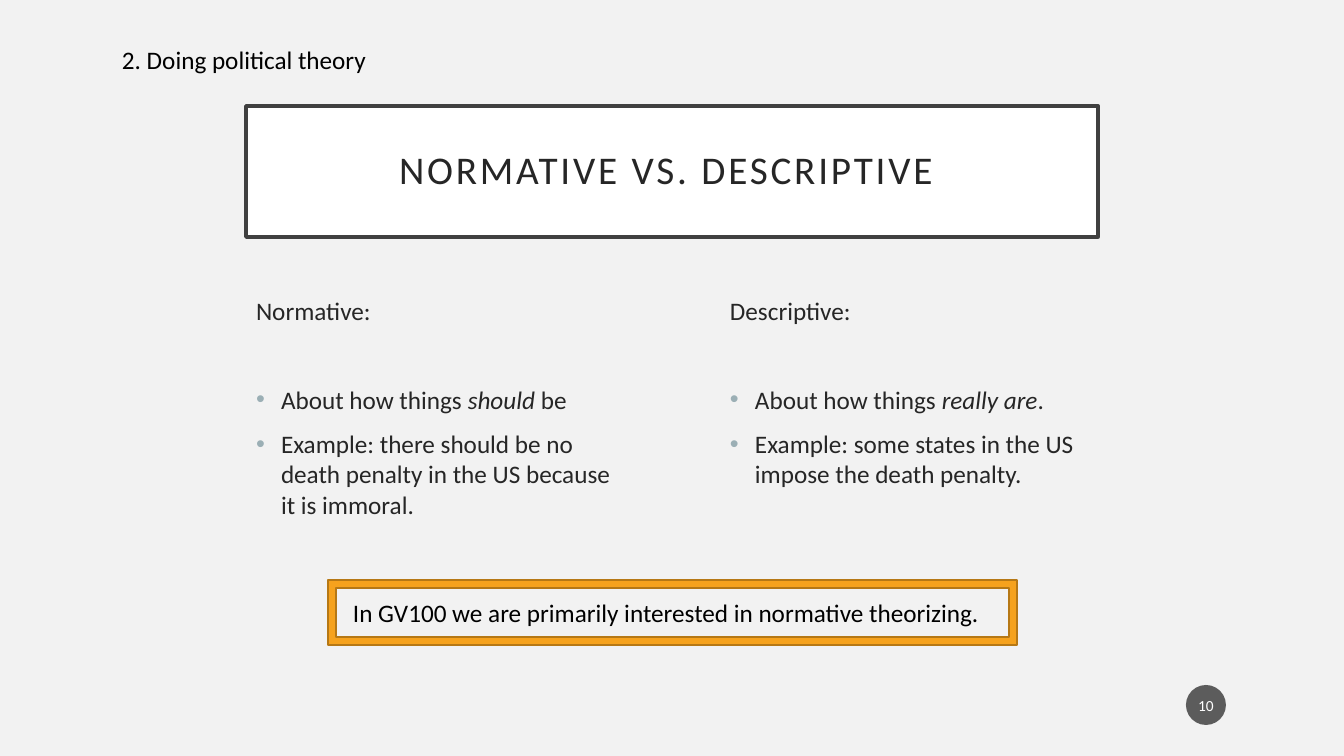
from lxml.etree import SubElement
from pptx import Presentation
from pptx.dml.color import RGBColor
from pptx.enum.shapes import MSO_SHAPE
from pptx.enum.text import MSO_ANCHOR, MSO_AUTO_SIZE, PP_ALIGN
from pptx.oxml.ns import qn
from pptx.util import Emu, Pt

EMU_PER_PX = 914400 / 100.8
FONT = "Calibri"
BACKGROUND = RGBColor(0xF2, 0xF2, 0xF2)
WHITE = RGBColor(0xFF, 0xFF, 0xFF)
BLACK = RGBColor(0x00, 0x00, 0x00)
INK = RGBColor(0x26, 0x26, 0x26)
TITLE_BORDER = RGBColor(0x40, 0x40, 0x40)
BULLET = RGBColor(0x9B, 0xAF, 0xB5)
BADGE = RGBColor(0x1D, 0x1D, 0x1D)
ORANGE = RGBColor(0xF6, 0xA2, 0x1D)
ORANGE_BORDER = RGBColor(0xB6, 0x78, 0x15)

COLUMNS = [
    (246, "Normative:", [
        [("About how things ", False), ("should ", True), ("be", False)],
        [("Example: there should be no death penalty in the US because it is immoral.", False)],
    ]),
    (720, "Descriptive:", [
        [("About how things ", False), ("really are", True), (".", False)],
        [("Example: some states in the US impose the death penalty.", False)],
    ]),
]


def px(length):
    return Emu(round(length * EMU_PER_PX))


def place(shape, left, top, width, height):
    shape.left, shape.top = px(left), px(top)
    shape.width, shape.height = px(width), px(height)


def write(paragraph, text, size=18, color=INK, italic=False, align=PP_ALIGN.LEFT, tracking=0):
    paragraph.alignment = align
    run = paragraph.add_run()
    run.text = text
    run.font.name = FONT
    run.font.size = Pt(size)
    run.font.italic = italic
    run.font.color.rgb = color
    if tracking:
        run.font._element.set("spc", str(tracking * 100))


def set_frame(frame, anchor, side, edge):
    frame.word_wrap = True
    frame.auto_size = MSO_AUTO_SIZE.NONE
    frame.vertical_anchor = anchor
    frame.margin_left = frame.margin_right = px(side)
    frame.margin_top = frame.margin_bottom = px(edge)


def set_bullet(paragraph, indent):
    properties = paragraph._p.get_or_add_pPr()
    properties.set("marL", str(px(indent)))
    properties.set("indent", str(px(-indent)))
    if not indent:
        SubElement(properties, qn("a:buNone"))
        return
    color = SubElement(properties, qn("a:buClr"))
    SubElement(color, qn("a:srgbClr"), val=str(BULLET))
    SubElement(properties, qn("a:buFont"), typeface="Arial")
    SubElement(properties, qn("a:buChar"), char="•")


def fill_title(title):
    place(title, 246, 106, 852, 131)
    title.fill.solid()
    title.fill.fore_color.rgb = WHITE
    title.line.color.rgb = TITLE_BORDER
    title.line.width = Pt(2.5)
    set_frame(title.text_frame, MSO_ANCHOR.MIDDLE, 20, 20)
    heading = title.text_frame.paragraphs[0]
    heading.line_spacing = 0.9
    write(heading, "NORMATIVE VS. DESCRIPTIVE ", size=28, align=PP_ALIGN.CENTER, tracking=2)


def fill_column(body, left, heading, points):
    place(body, left, 290, 379, 342)
    frame = body.text_frame
    set_frame(frame, MSO_ANCHOR.TOP, 10, 5)
    first = frame.paragraphs[0]
    first.space_before = Pt(10)
    set_bullet(first, 0)
    write(first, heading)
    for index, point in enumerate(points):
        paragraph = frame.add_paragraph()
        paragraph.space_before = Pt(10 if index else 42)
        set_bullet(paragraph, 25)
        for text, italic in point:
            write(paragraph, text, italic=italic)


def add_label(slide, text, *box):
    label = slide.shapes.add_textbox(*map(px, box))
    set_frame(label.text_frame, MSO_ANCHOR.TOP, 10, 5)
    write(label.text_frame.paragraphs[0], text, color=BLACK)


def add_filled(slide, kind, color, *box):
    shape = slide.shapes.add_shape(kind, *map(px, box))
    shape.shadow.inherit = False
    shape.fill.solid()
    shape.fill.fore_color.rgb = color
    return shape


def add_page_badge(slide, number):
    badge = add_filled(slide, MSO_SHAPE.OVAL, BADGE, 1186, 685, 40, 40)
    badge.line.fill.background()
    color = badge._element.spPr.find(qn("a:solidFill"))[0]
    SubElement(color, qn("a:alpha"), val="70000")
    set_frame(badge.text_frame, MSO_ANCHOR.MIDDLE, 2, 5)
    write(badge.text_frame.paragraphs[0], number, size=11, color=WHITE, align=PP_ALIGN.CENTER)


def add_takeaway(slide):
    add_label(slide, "In GV100 we are primarily interested in normative theorizing.", 343, 592, 657, 40)
    border = add_filled(slide, MSO_SHAPE.FRAME, ORANGE, 328, 580, 689, 65)
    border.line.color.rgb = ORANGE_BORDER
    border.line.width = Pt(1)


def main():
    presentation = Presentation()
    presentation.slide_width, presentation.slide_height = px(1344), px(756)
    slide = presentation.slides.add_slide(presentation.slide_layouts.get_by_name("Two Content"))
    slide.background.fill.solid()
    slide.background.fill.fore_color.rgb = BACKGROUND
    title, *bodies = slide.placeholders
    fill_title(title)
    for body, column in zip(bodies, COLUMNS):
        fill_column(body, *column)
    add_page_badge(slide, "10")
    add_takeaway(slide)
    add_label(slide, "2. Doing political theory", 112, 39, 267, 40)
    presentation.save("out.pptx")


if __name__ == "__main__":
    main()
